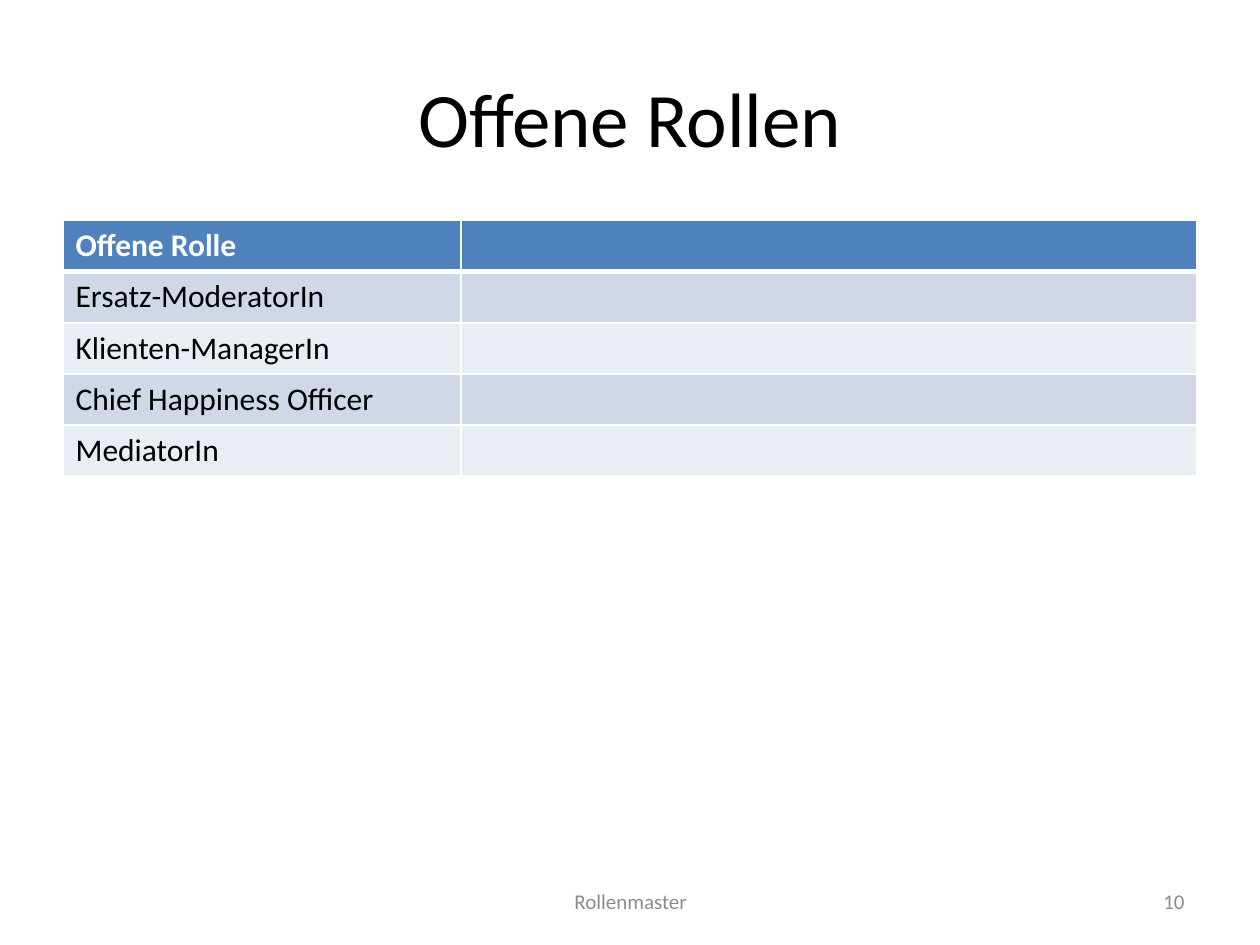
from lxml.etree import SubElement
from pptx import Presentation
from pptx.dml.color import RGBColor
from pptx.enum.text import MSO_ANCHOR as Anchor, PP_ALIGN as Align
from pptx.oxml.ns import qn
from pptx.util import Inches, Pt

COLORS = {"text": "000000", "white": "FFFFFF", "header": "4F81BD",
          "odd": "D0D8E8", "even": "E9EDF4", "footer": "8C8C8C"}
ROLES = ["Offene Rolle", "Ersatz-ModeratorIn", "Klienten-ManagerIn",
         "Chief Happiness Officer", "MediatorIn"]


def write(tf, text, color, align=Align.LEFT, **font):
    """Put one formatted line of text into a text frame."""
    p = tf.paragraphs[0]
    p.alignment = align
    r = p.add_run()
    r.text = text
    r.font.color.rgb = RGBColor.from_string(COLORS[color])
    for name, value in {"name": "Calibri", "bold": False, **font}.items():
        setattr(r.font, name, value)


def add_title(s, box, text):
    """Move the title placeholder into the box and fill it."""
    sp = s.shapes.title
    for name, value in zip(("left", "top", "width", "height"), box):
        setattr(sp, name, Inches(value))
    sp.text_frame.vertical_anchor = Anchor.MIDDLE
    write(sp.text_frame, text, "text", Align.CENTER, size=Pt(44))


def set_borders(cell, widths):
    """Draw white cell borders with the given widths in points."""
    tc_pr = cell._tc.get_or_add_tcPr()
    for side, width in widths.items():
        ln = SubElement(tc_pr, qn(f"a:ln{side}"), w=str(Pt(width)))
        fill = SubElement(ln, qn("a:solidFill"))
        SubElement(fill, qn("a:srgbClr"), val=COLORS["white"])


def add_roles_table(s, box, roles, first_width):
    """Add the two-column table of roles with a header and banded rows."""
    left, top, width, height = box
    table = s.shapes.add_table(len(roles), 2, *map(Inches, box)).table
    for column, size in zip(table.columns, (first_width, width - first_width)):
        column.width = Inches(size)
    for i, role in enumerate(roles):
        header = i == 0
        table.rows[i].height = Inches(height / len(roles))
        band = "header" if header else "odd" if i % 2 else "even"
        for cell in table.rows[i].cells:
            set_borders(cell, {"L": 1, "R": 1, "T": 3 if i == 1 else 1,
                               "B": 3 if header else 1})
            cell.fill.solid()
            cell.fill.fore_color.rgb = RGBColor.from_string(COLORS[band])
        write(table.cell(i, 0).text_frame, role, "white" if header else "text",
              size=Pt(18), bold=header)


def add_footer(s, box, text, align):
    """Add a small grey footer text in the box."""
    tf = s.shapes.add_textbox(*map(Inches, box)).text_frame
    tf.word_wrap = True
    tf.vertical_anchor = Anchor.MIDDLE
    write(tf, text, "footer", align, size=Pt(12))


def main():
    """Build and save the slide."""
    prs = Presentation()
    prs.slide_width, prs.slide_height = Inches(10), Inches(7.5)
    s = prs.slides.add_slide(prs.slide_layouts[5])
    add_title(s, (0.5, 0.3, 9, 1.25), "Offene Rollen")
    add_roles_table(s, (0.5, 1.75, 9, 2.03), ROLES, 3.16)
    add_footer(s, (7.17, 6.95, 2.33, 0.4), "10", Align.RIGHT)
    add_footer(s, (3.42, 6.95, 3.17, 0.4), "Rollenmaster", Align.CENTER)
    prs.save("out.pptx")


if __name__ == "__main__":
    main()
